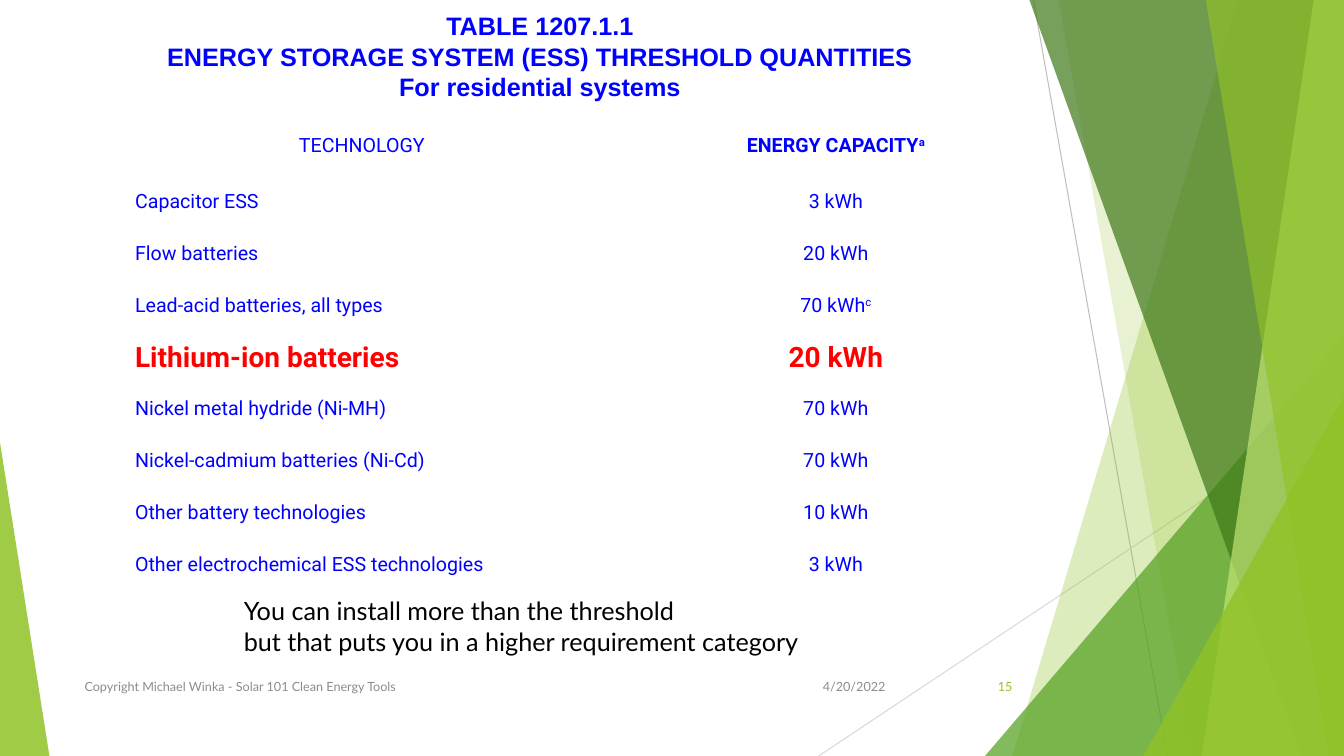
from dataclasses import dataclass

from lxml.etree import SubElement
from pptx import Presentation
from pptx.dml.color import RGBColor
from pptx.enum.shapes import MSO_CONNECTOR, MSO_SHAPE
from pptx.enum.text import MSO_ANCHOR, PP_ALIGN
from pptx.oxml.ns import qn
from pptx.util import Inches, Pt


@dataclass(frozen=True)
class Theme:
    blue: str = "0000FF"
    red: str = "FF0000"
    black: str = "000000"
    gray: str = "8C8C8C"
    lime: str = "90C226"
    green: str = "54A021"
    dark: str = "3F7819"
    pale: str = "C0E474"
    rule: str = "BFBFBF"
    faint: str = "D9D9D9"
    head: str = "Arial"
    body: str = "Lato"
    grid: str = "Roboto"
    large: int = 18
    hot: int = 20
    cell: int = 14
    small: int = 9


@dataclass(frozen=True)
class Box:
    left: float
    top: float
    width: float
    height: float

    @property
    def right(self):
        return self.left + self.width

    @property
    def base(self):
        return self.top + self.height

    def place(self):
        return [Inches(n) for n in (self.left, self.top, self.width, self.height)]


THEME = Theme()
PLAIN = "{2D5ABB26-0587-4C30-8999-92F81FD0307C}"
ROWS = [
    ("TECHNOLOGY", "ENERGY CAPACITY", "a"),
    ("Capacitor ESS", "3 kWh", ""),
    ("Flow batteries", "20 kWh", ""),
    ("Lead-acid batteries, all types", "70 kWh", "c"),
    ("Lithium-ion batteries", "20 kWh", ""),
    ("Nickel metal hydride (Ni-MH)", "70 kWh", ""),
    ("Nickel-cadmium batteries (Ni-Cd)", "70 kWh", ""),
    ("Other battery technologies", "10 kWh", ""),
    ("Other electrochemical ESS technologies", "3 kWh", ""),
]
HOT = 4


def style(para, face, size, color, bold=False, align=PP_ALIGN.LEFT):
    para.alignment = align
    font = para.font
    font.name, font.size, font.bold = face, Pt(size), bold
    font.color.rgb = RGBColor.from_string(color)


def write(slide, box, lines, face, size, color, bold=False,
          align=PP_ALIGN.LEFT, anchor=MSO_ANCHOR.MIDDLE, wrap=True, inset=True):
    frame = slide.shapes.add_textbox(*box.place()).text_frame
    frame.word_wrap = wrap
    frame.vertical_anchor = anchor
    if not inset:
        frame.margin_left = frame.margin_right = 0
        frame.margin_top = frame.margin_bottom = 0
    for i, line in enumerate(lines):
        para = frame.add_paragraph() if i else frame.paragraphs[0]
        para.text = line
        style(para, face, size, color, bold, align)


def paint(shape, color, alpha):
    shape.shadow.inherit = False
    shape.line.fill.background()
    shape.fill.solid()
    shape.fill.fore_color.rgb = RGBColor.from_string(color)
    tint = shape.fill._xPr.find(".//" + qn("a:srgbClr"))
    SubElement(tint, qn("a:alpha")).set("val", str(alpha * 1000))


def draw_line(slide, start, end, color):
    line = slide.shapes.add_connector(
        MSO_CONNECTOR.STRAIGHT, *[Inches(n) for n in (*start, *end)])
    line.line.color.rgb = RGBColor.from_string(color)
    line.line.width = Pt(0.75)
    SubElement(line._element.spPr, qn("a:effectLst"))


def draw_panel(slide, box, top, base, color, alpha):
    points = [(top, box.top), (box.right, box.top),
              (box.right, box.base), (base, box.base)]
    first, *rest = [(Inches(x), Inches(y)) for x, y in points]
    form = slide.shapes.build_freeform(*first)
    form.add_line_segments(rest)
    paint(form.convert_to_shape(), color, alpha)


def draw_wedge(slide, box, tip, color, alpha):
    shape = slide.shapes.add_shape(MSO_SHAPE.ISOSCELES_TRIANGLE, *box.place())
    shape.adjustments[0] = tip
    paint(shape, color, alpha)


def add_decor(slide, box):
    def corner(width, height):
        return Box(box.right - width, box.base - height, width, height)

    draw_line(slide, (10.25, box.top), (11.58, box.base), THEME.rule)
    draw_line(slide, (box.right, 4.03), (8.12, box.base), THEME.faint)
    draw_panel(slide, box, 12.28, 10.04, THEME.lime, 30)
    draw_panel(slide, box, 10.5, 11.83, THEME.lime, 20)
    draw_wedge(slide, corner(3.56, 4.17), 1, THEME.green, 72)
    draw_panel(slide, box, 10.21, 12.91, THEME.dark, 70)
    draw_panel(slide, box, 13.03, 11.92, THEME.pale, 70)
    draw_panel(slide, box, 11.96, 13.18, THEME.lime, 65)
    draw_wedge(slide, corner(1.99, 3.57), 1, THEME.lime, 80)
    draw_wedge(slide, Box(box.left, box.base - 3.11, 0.49, 3.11), 0, THEME.lime, 85)


def add_title(slide, box):
    lines = ["TABLE 1207.1.1",
             "ENERGY STORAGE SYSTEM (ESS) THRESHOLD QUANTITIES",
             "For residential systems"]
    write(slide, box, lines, THEME.head, THEME.large, THEME.blue, True,
          PP_ALIGN.CENTER, wrap=False, inset=False)


def fill_cell(cell, text, mark, hot, bold, align):
    cell.fill.background()
    cell.vertical_anchor = MSO_ANCHOR.MIDDLE
    cell.margin_left, cell.margin_right = Inches(0.12), Inches(0.08)
    cell.margin_top = cell.margin_bottom = Inches(0.04)
    para = cell.text_frame.paragraphs[0]
    para.add_run().text = text
    if mark:
        run = para.add_run()
        run.text = mark
        run.font._element.set("baseline", "30000")
    size, color = (THEME.hot, THEME.red) if hot else (THEME.cell, THEME.blue)
    style(para, THEME.grid, size, color, bold, align)


def add_grid(slide, box):
    table = slide.shapes.add_table(len(ROWS), 2, *box.place()).table
    table.first_row = table.horz_banding = False
    table._tbl.tblPr.find(qn("a:tableStyleId")).text = PLAIN
    head = 0.6
    step = (box.height - head) / (len(ROWS) - 1)
    for i, (name, value, mark) in enumerate(ROWS):
        table.rows[i].height = Inches(step if i else head)
        hot = i == HOT
        side = PP_ALIGN.LEFT if i else PP_ALIGN.CENTER
        fill_cell(table.cell(i, 0), name, "", hot, hot, side)
        fill_cell(table.cell(i, 1), value, mark, hot, hot or i == 0, PP_ALIGN.CENTER)


def add_note(slide, box):
    lines = ["You can install more than the threshold",
             "but that puts you in a higher requirement category"]
    write(slide, box, lines, THEME.body, THEME.large, THEME.black,
          anchor=MSO_ANCHOR.TOP, wrap=False)


def add_foot(slide, box):
    parts = [
        (7.14, 1, "4/20/2022", THEME.gray, PP_ALIGN.RIGHT),
        (0, 6.89, "Copyright Michael Winka - Solar 101 Clean Energy Tools",
         THEME.gray, PP_ALIGN.LEFT),
        (8.65, 0.75, "15", THEME.lime, PP_ALIGN.RIGHT),
    ]
    for shift, width, text, color, align in parts:
        spot = Box(box.left + shift, box.top, width, box.height)
        write(slide, spot, [text], THEME.body, THEME.small, color, align=align)


def main():
    deck = Presentation()
    page = Box(0, 0, 13.33, 7.5)
    deck.slide_width, deck.slide_height = Inches(page.width), Inches(page.height)
    slide = deck.slides.add_slide(deck.slide_layouts[6])
    add_decor(slide, page)
    add_foot(slide, Box(0.74, 6.61, 9.4, 0.4))
    add_grid(slide, Box(1.22, 1.15, 9.4, 4.71))
    add_title(slide, Box(1.62, 0.1, 7.47, 0.91))
    add_note(slide, Box(2.32, 5.86, 6.06, 0.71))
    deck.save("out.pptx")


if __name__ == "__main__":
    main()
